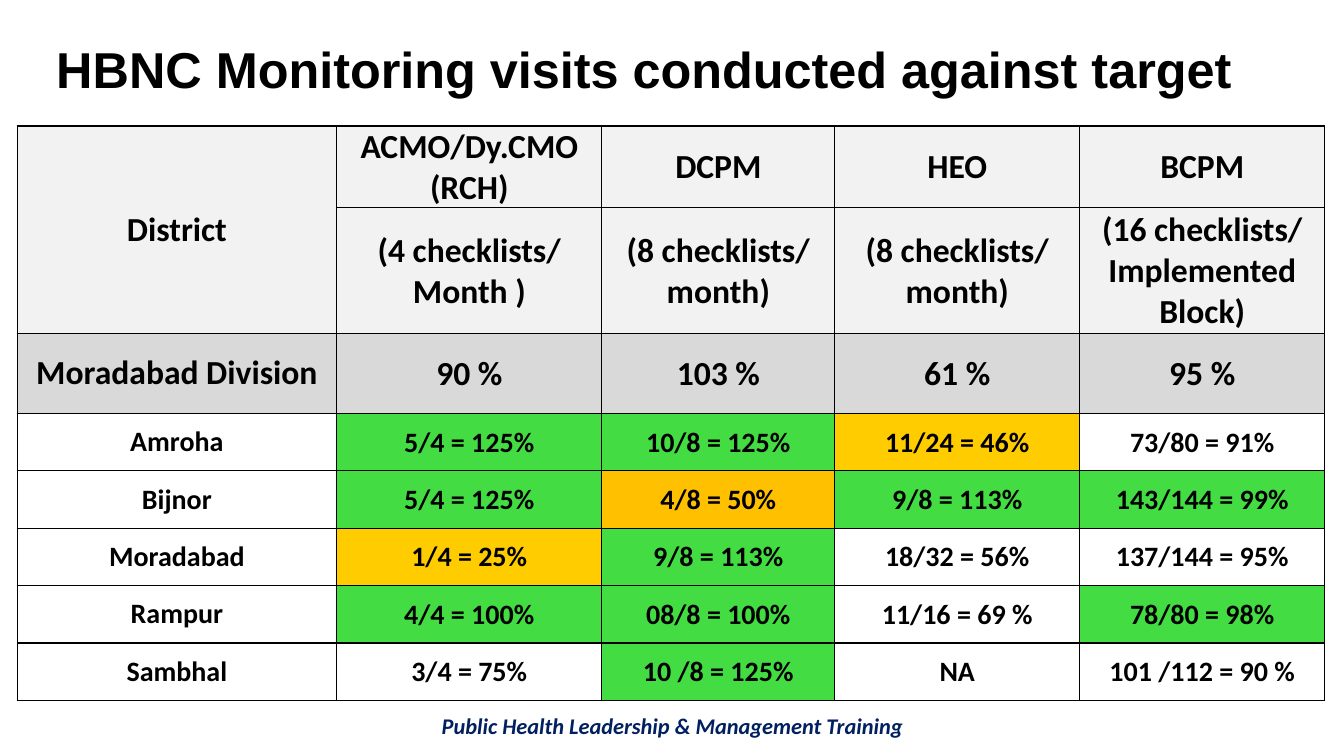
from lxml import etree
from pptx import Presentation
from pptx.dml.color import RGBColor
from pptx.enum.text import MSO_ANCHOR, PP_ALIGN
from pptx.oxml.ns import qn
from pptx.util import Pt

PX = 9144  # EMU per px, 100 px to the inch
SLIDE_SIZE = (1333, 750)
CENTER, LEFT = PP_ALIGN.CENTER, PP_ALIGN.LEFT
MIDDLE, TOP = MSO_ANCHOR.MIDDLE, MSO_ANCHOR.TOP

COLORS = {
    "text": "000000",
    "footer": "002060",
    "header": "F2F2F2",
    "division": "D9D9D9",
    "green": "43DD43",
    "yellow": "FFCC00",
    "amber": "FFC000",
}

COLUMN_WIDTHS = [317, 263, 231, 243, 243]
ROW_HEIGHTS = [80, 125, 79] + [57] * 5
HEADER_ROWS = 2
DIVISION_ROW = 2

VISITS = [
    ["District", "ACMO/Dy.CMO (RCH)", "DCPM", "HEO", "BCPM"],
    ["", "(4 checklists/ Month )", "(8 checklists/ month)",
     "(8 checklists/ month)", "(16 checklists/ Implemented Block)"],
    ["Moradabad Division", "90 %", "103 %", "61 %", "95 %"],
    ["Amroha", "5/4 = 125%", "10/8 = 125%", "11/24 = 46%", "73/80 = 91%"],
    ["Bijnor", "5/4 = 125%", "4/8 = 50%", "9/8 = 113%", "143/144 = 99%"],
    ["Moradabad", "1/4 = 25%", "9/8 = 113%", "18/32 = 56%", "137/144 = 95%"],
    ["Rampur", "4/4 = 100%", "08/8 = 100%", "11/16 = 69 %", "78/80 = 98%"],
    ["Sambhal", "3/4 = 75%", "10 /8 = 125%", "NA", "101 /112 = 90 %"],
]

RATINGS = {
    "Amroha": ["green", "green", "yellow", None],
    "Bijnor": ["green", "amber", "green", "green"],
    "Moradabad": ["yellow", "green", None, None],
    "Rampur": ["green", "green", None, "green"],
    "Sambhal": [None, "green", None, None],
}


def px(length):
    return length * PX


def write(frame, text, size, font="Calibri", color="text", italic=False,
          align=CENTER, anchor=MIDDLE, spacing=None):
    frame.word_wrap = True
    frame.vertical_anchor = anchor
    paragraph = frame.paragraphs[0]
    paragraph.alignment = align
    if spacing:
        paragraph.line_spacing = spacing
    run = paragraph.add_run()
    run.text = text
    run.font.name = font
    run.font.size = Pt(size)
    run.font.bold = True
    run.font.italic = italic
    run.font.color.rgb = RGBColor.from_string(COLORS[color])


def add_text(slide, box, text, size, **text_format):
    label = slide.shapes.add_textbox(*map(px, box))
    write(label.text_frame, text, size, **text_format)


def add_borders(cell):
    properties = cell._tc.get_or_add_tcPr()
    for position, side in enumerate(("a:lnL", "a:lnR", "a:lnT", "a:lnB")):
        line = etree.Element(qn(side), w=str(Pt(1)))
        fill = etree.SubElement(line, qn("a:solidFill"))
        etree.SubElement(fill, qn("a:srgbClr"), val=COLORS["text"])
        properties.insert(position, line)


def cell_color(row, column):
    if row < HEADER_ROWS:
        return "header"
    if row == DIVISION_ROW:
        return "division"
    if column == 0:
        return None
    return RATINGS[VISITS[row][0]][column - 1]


def style_cell(cell, text, size, color, inset):
    cell.margin_left = cell.margin_right = cell.margin_top = px(inset)
    cell.margin_bottom = 0
    cell.vertical_anchor = MIDDLE
    if color:
        cell.fill.solid()
        cell.fill.fore_color.rgb = RGBColor.from_string(COLORS[color])
    else:
        cell.fill.background()
    add_borders(cell)
    if text:
        write(cell.text_frame, text, size)


def add_visits_table(slide, box):
    table = slide.shapes.add_table(
        len(ROW_HEIGHTS), len(COLUMN_WIDTHS), *map(px, box)).table
    table.first_row = table.horz_banding = False
    for column, width in zip(table.columns, COLUMN_WIDTHS):
        column.width = px(width)
    for row, height in zip(table.rows, ROW_HEIGHTS):
        row.height = px(height)
    for r, texts in enumerate(VISITS):
        for c, text in enumerate(texts):
            style_cell(table.cell(r, c), text,
                       size=24 if r <= DIVISION_ROW else 20,
                       color=cell_color(r, c), inset=1 if c else 0)
    table.cell(0, 0).merge(table.cell(HEADER_ROWS - 1, 0))


def add_monitoring_slide(deck, box):
    left, top, width, height = box
    slide = deck.slides.add_slide(deck.slide_layouts[6])
    add_text(slide, (left + 92, top + height - 48, 1150, 37),
             "Public Health Leadership & Management Training", 16,
             color="footer", italic=True, anchor=TOP)
    add_text(slide, (left + 46, top + 25, 1196, 94),
             "HBNC Monitoring visits conducted against target", 36,
             font="Arial", align=LEFT, spacing=0.9)
    add_visits_table(slide, (left + 17, top + 125, sum(COLUMN_WIDTHS),
                             sum(ROW_HEIGHTS)))


def main():
    deck = Presentation()
    deck.slide_width, deck.slide_height = map(px, SLIDE_SIZE)
    add_monitoring_slide(deck, (0, 0, *SLIDE_SIZE))
    deck.save("out.pptx")


if __name__ == "__main__":
    main()
